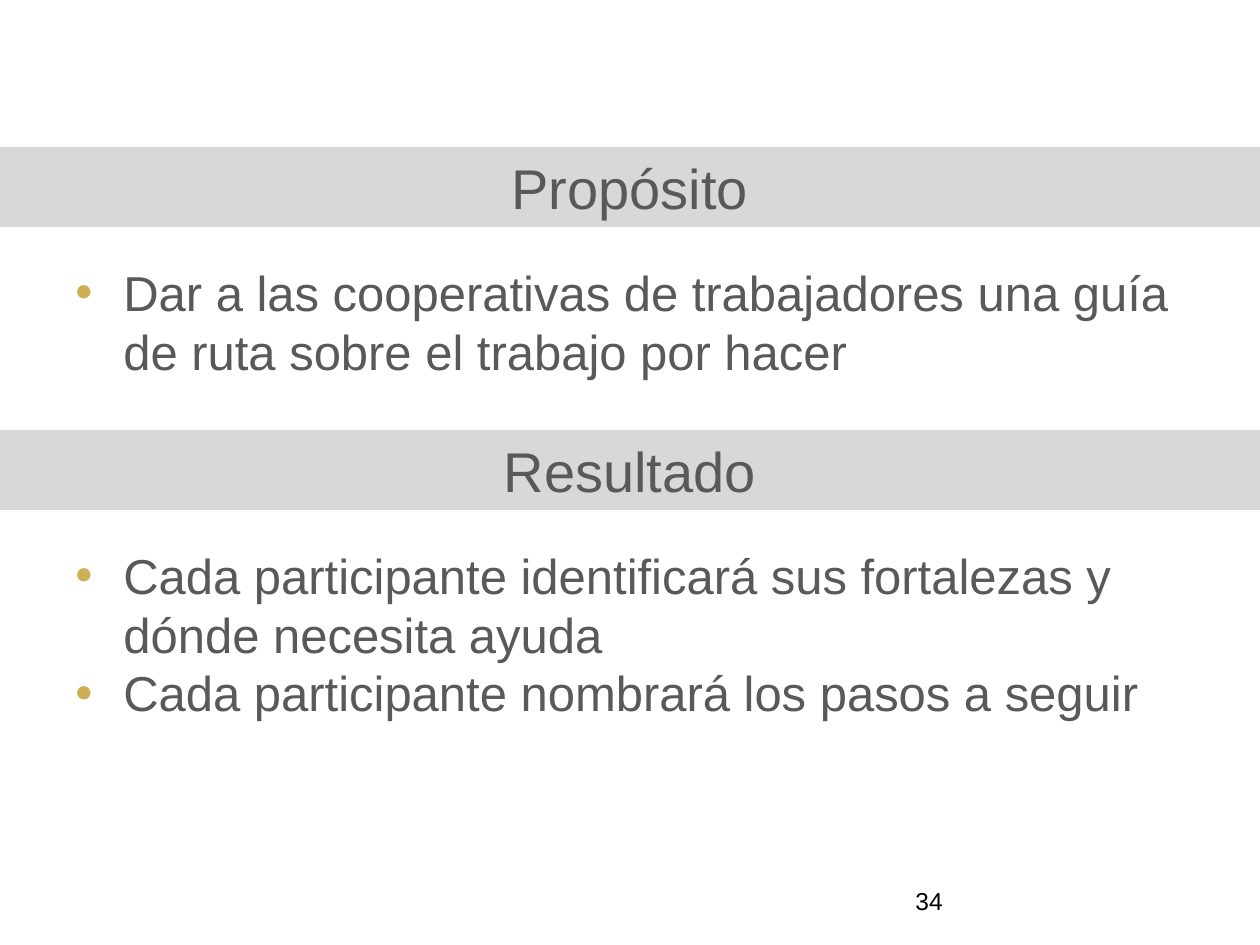
from lxml import etree
from pptx import Presentation
from pptx.dml.color import RGBColor
from pptx.enum.shapes import MSO_SHAPE
from pptx.enum.text import MSO_ANCHOR, PP_ALIGN
from pptx.oxml.ns import qn
from pptx.util import Pt

RECTANGLE = MSO_SHAPE.RECTANGLE
TOP, MIDDLE = MSO_ANCHOR.TOP, MSO_ANCHOR.MIDDLE
CENTER = PP_ALIGN.CENTER
EMU_PER_PX = 914400 / 126
SLIDE_WIDTH, SLIDE_HEIGHT = 1260, 945
BAND_HEIGHT = 80
BODY_LEFT, BODY_WIDTH, BODY_OFFSET = 63, 1124, 109
BULLET_INDENT = 48
FONT = "Arial"
COLORS = {"band": "D8D8D8", "text": "595959", "bullet": "CDB053",
          "number": "000000", "background": "FFFFFF"}

SECTIONS = [
    (147, "Propósito", 131,
     ["Dar a las cooperativas de trabajadores una guía de ruta sobre el trabajo por hacer"]),
    (430, "Resultado", 251,
     ["Cada participante identificará sus fortalezas y dónde necesita ayuda",
      "Cada participante nombrará los pasos a seguir"]),
]


def px(length):
    """Turn pixels into EMU."""
    return round(length * EMU_PER_PX)


def color(name):
    """Look up a named colour."""
    return RGBColor.from_string(COLORS[name])


def add_run(paragraph, text, size, color_name):
    """Add one formatted run to a paragraph."""
    run = paragraph.add_run()
    run.text = text
    run.font.name = FONT
    run.font.size = Pt(size)
    run.font.color.rgb = color(color_name)


def add_band(slide, top, heading):
    """Add a full-width band with a centred heading."""
    band = slide.shapes.add_shape(RECTANGLE, 0, px(top), px(SLIDE_WIDTH), px(BAND_HEIGHT))
    band.shadow.inherit = False
    band.fill.solid()
    band.fill.fore_color.rgb = color("band")
    band.line.fill.background()
    band.text_frame.word_wrap = True
    band.text_frame.vertical_anchor = TOP
    paragraph = band.text_frame.paragraphs[0]
    paragraph.alignment = CENTER
    add_run(paragraph, heading, 32, "text")


def add_text_frame(slide, left, top, width, height, anchor=TOP):
    """Add a wrapping text box and return its text frame."""
    box = slide.shapes.add_textbox(px(left), px(top), px(width), px(height))
    frame = box.text_frame
    frame.word_wrap = True
    frame.vertical_anchor = anchor
    return frame


def set_bullet(paragraph):
    """Give a paragraph a coloured bullet and a hanging indent."""
    properties = paragraph._p.get_or_add_pPr()
    properties.set("marL", str(px(BULLET_INDENT)))
    properties.set("indent", str(-px(BULLET_INDENT)))
    bullet_color = etree.SubElement(properties, qn("a:buClr"))
    etree.SubElement(bullet_color, qn("a:srgbClr"), val=COLORS["bullet"])
    etree.SubElement(properties, qn("a:buFont"), typeface=FONT)
    etree.SubElement(properties, qn("a:buChar"), char="•")


def add_bullets(slide, top, height, items):
    """Add a bulleted list below a band."""
    frame = add_text_frame(slide, BODY_LEFT, top, BODY_WIDTH, height)
    for index, item in enumerate(items):
        paragraph = frame.add_paragraph() if index else frame.paragraphs[0]
        set_bullet(paragraph)
        add_run(paragraph, item, 28, "text")


def add_page_number(slide, number):
    """Add the page number at the foot of the slide."""
    frame = add_text_frame(slide, 903, 876, 294, 50, MIDDLE)
    add_run(frame.paragraphs[0], number, 14, "number")


def main():
    """Build and save the slide."""
    presentation = Presentation()
    presentation.slide_width = px(SLIDE_WIDTH)
    presentation.slide_height = px(SLIDE_HEIGHT)
    slide = presentation.slides.add_slide(presentation.slide_layouts[6])
    slide.background.fill.solid()
    slide.background.fill.fore_color.rgb = color("background")
    for top, heading, body_height, items in SECTIONS:
        add_band(slide, top, heading)
        add_bullets(slide, top + BODY_OFFSET, body_height, items)
    add_page_number(slide, "34")
    presentation.save("out.pptx")


if __name__ == "__main__":
    main()
